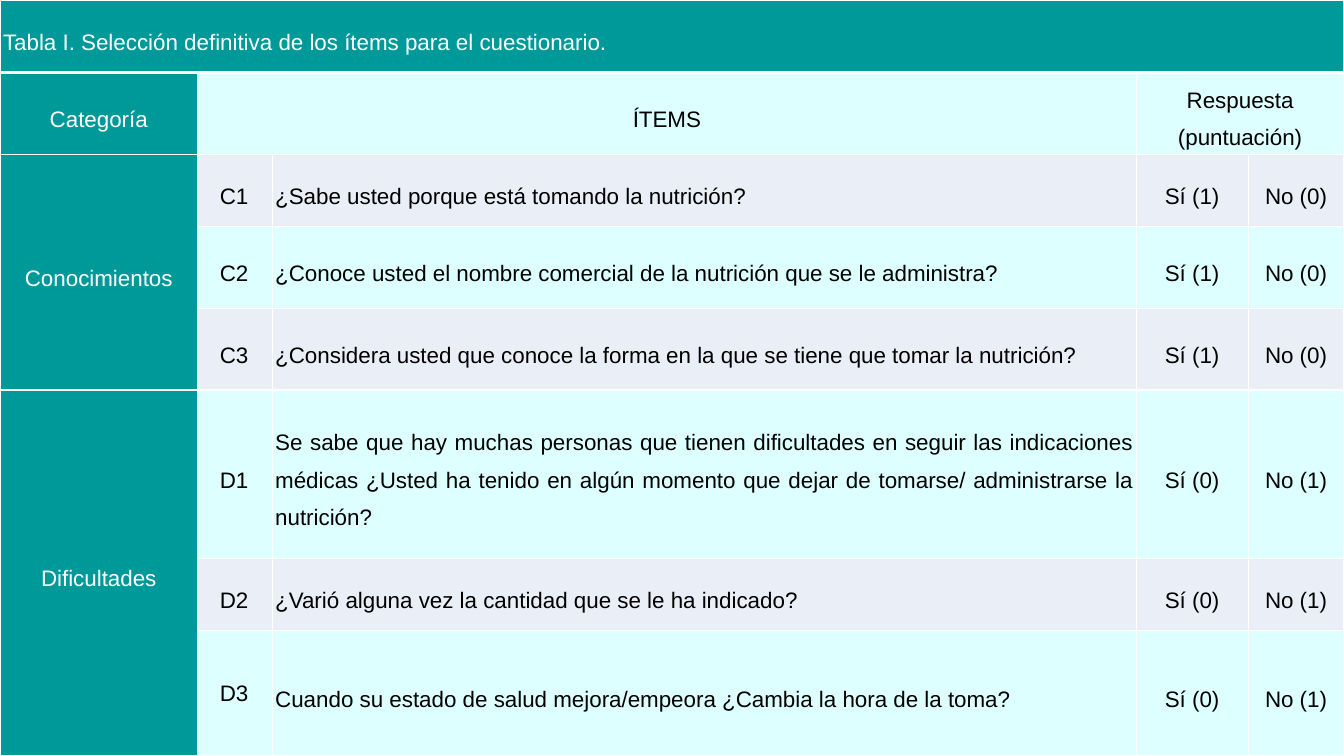
from dataclasses import dataclass

from lxml.etree import SubElement
from pptx import Presentation
from pptx.dml.color import RGBColor
from pptx.enum.text import MSO_ANCHOR, PP_ALIGN
from pptx.oxml.ns import qn
from pptx.util import Inches, Pt


@dataclass(frozen=True)
class Theme:
    teal: str = "009999"
    aqua: str = "DDFFFF"
    mist: str = "EAEFF7"
    white: str = "FFFFFF"
    black: str = "000000"
    font: str = "Arial"
    size: int = 16
    border: int = 1
    title_border: int = 3


theme = Theme()

COLUMNS = [1.96, 0.74, 8.57, 1.11, 0.95]
ROWS = [0.72, 0.81, 0.72, 0.81, 0.81, 1.67, 0.72, 1.24]
CODE_INDENT = Inches(0.19)

# Category, score for "Sí", score for "No", questions
CATEGORIES = [
    ("Conocimientos", 1, 0, [
        "¿Sabe usted porque está tomando la nutrición?",
        "¿Conoce usted el nombre comercial de la nutrición que se le administra?",
        "¿Considera usted que conoce la forma en la que se tiene que tomar la nutrición?",
    ]),
    ("Dificultades", 0, 1, [
        "Se sabe que hay muchas personas que tienen dificultades en seguir las "
        "indicaciones médicas ¿Usted ha tenido en algún momento que dejar de "
        "tomarse/ administrarse la nutrición?",
        "¿Varió alguna vez la cantidad que se le ha indicado?",
        "Cuando su estado de salud mejora/empeora ¿Cambia la hora de la toma?",
    ]),
]


def set_borders(cell, bottom):
    properties = cell._tc.get_or_add_tcPr()
    for side in "LRTB":
        points = bottom if side == "B" else theme.border
        line = SubElement(properties, qn(f"a:ln{side}"), w=str(Pt(points)))
        SubElement(SubElement(line, qn("a:solidFill")), qn("a:srgbClr"), val=theme.white)


def write_cell(row, column, text, fill, align=PP_ALIGN.CENTER, rows=1, columns=1):
    """Fill one cell, merged over the given number of rows and columns."""
    cell = questionnaire.cell(row, column)
    if rows * columns > 1:
        cell.merge(questionnaire.cell(row + rows - 1, column + columns - 1))
    cell.fill.solid()
    cell.fill.fore_color.rgb = RGBColor.from_string(fill)
    cell.vertical_anchor = MSO_ANCHOR.MIDDLE
    cell.margin_left = cell.margin_right = Inches(0.03)
    cell.margin_top = cell.margin_bottom = 0
    cell.text_frame.text = text
    paragraph = cell.text_frame.paragraphs[0]
    paragraph.alignment = align
    paragraph.line_spacing = 1.5
    font = paragraph.runs[0].font
    font.name, font.size, font.bold = theme.font, Pt(theme.size), False
    ink = theme.white if fill == theme.teal else theme.black
    font.color.rgb = RGBColor.from_string(ink)
    return cell


presentation = Presentation()
presentation.slide_width = Inches(13.33)
presentation.slide_height = Inches(7.5)
slide = presentation.slides.add_slide(presentation.slide_layouts[6])

questionnaire = slide.shapes.add_table(
    len(ROWS), len(COLUMNS), 0, 0, presentation.slide_width, presentation.slide_height
).table
for column, width in zip(questionnaire.columns, COLUMNS):
    column.width = Inches(width)
for row, height in zip(questionnaire.rows, ROWS):
    row.height = Inches(height)
for index, row in enumerate(questionnaire.rows):
    for cell in row.cells:
        set_borders(cell, theme.border if index else theme.title_border)

write_cell(0, 0, "Tabla I. Selección definitiva de los ítems para el cuestionario.",
           theme.teal, PP_ALIGN.LEFT, columns=5)
write_cell(1, 0, "Categoría", theme.teal)
write_cell(1, 1, "ÍTEMS", theme.aqua, columns=2)
write_cell(1, 3, "Respuesta (puntuación)", theme.aqua, columns=2)

row = 2
for category, yes_score, no_score, questions in CATEGORIES:
    write_cell(row, 0, category, theme.teal, rows=len(questions))
    for number, question in enumerate(questions, 1):
        band = theme.aqua if row % 2 else theme.mist
        code = write_cell(row, 1, f"{category[0]}{number}", band, PP_ALIGN.LEFT)
        code.margin_left += CODE_INDENT
        write_cell(row, 2, question, band, PP_ALIGN.JUSTIFY)
        write_cell(row, 3, f"Sí ({yes_score})", band)
        write_cell(row, 4, f"No ({no_score})", band)
        row += 1

# The last code sits slightly above the middle of its row
code.margin_bottom = Inches(0.12)

presentation.save("out.pptx")
